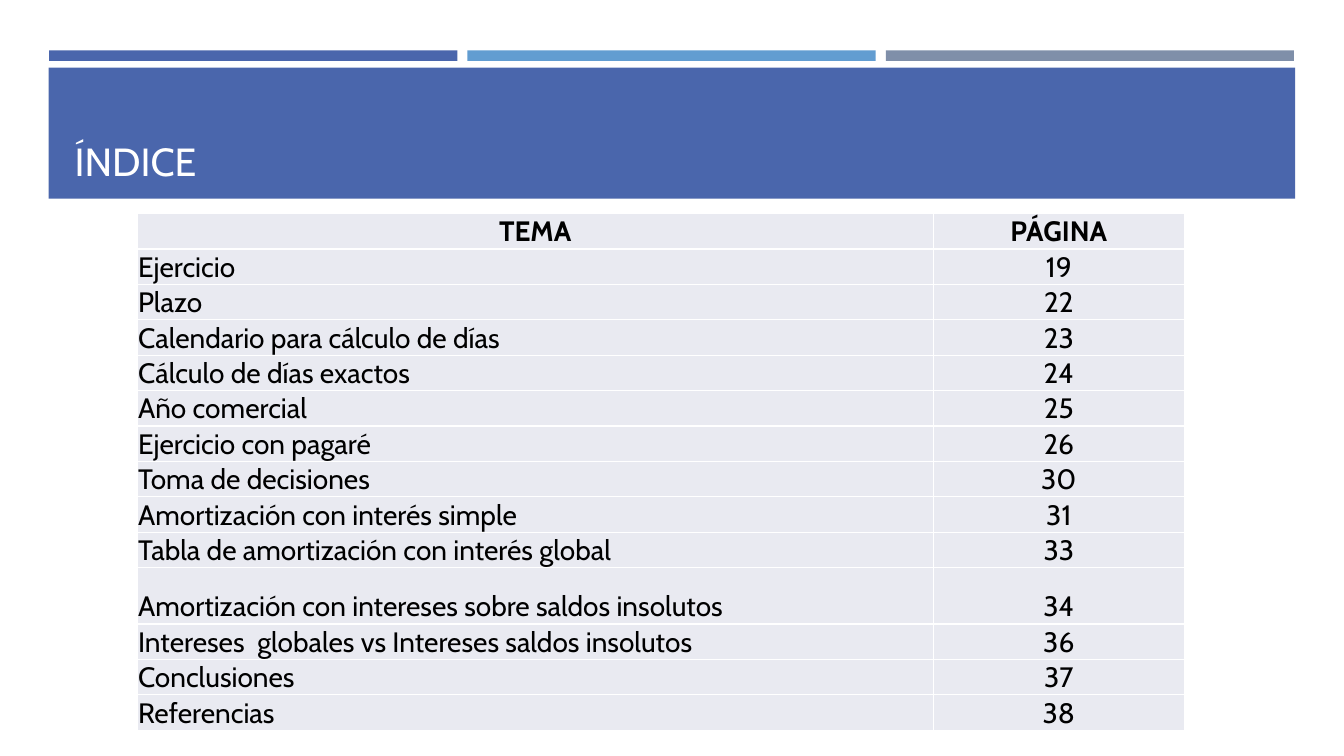
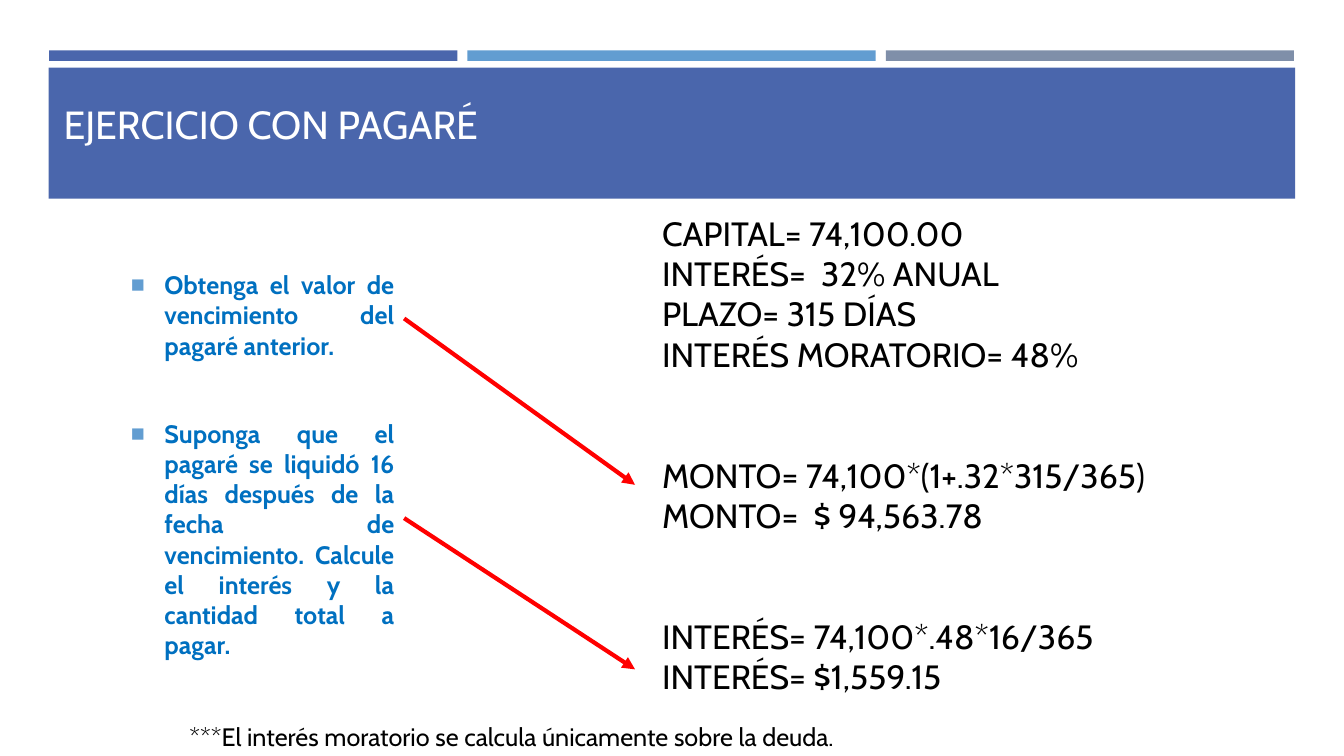
from dataclasses import dataclass

from pptx import Presentation
from pptx import util as u
from pptx.dml import color as col
from pptx.enum import shapes as shp, text as txt
from pptx.oxml import ns, xmlchemy as xc

Pt = u.Pt
rgb = col.RGBColor.from_string
ALIGN = txt.PP_ALIGN
ANCHOR = txt.MSO_ANCHOR


@dataclass(frozen=True)
class Theme:
    font: str = "Cabin"
    primary: str = "4A66AC"
    accent: str = "629DD1"
    muted: str = "7F8FA9"
    row: str = "E9EAF1"
    light: str = "FFFFFF"
    ink: str = "000000"
    question: str = "0070C0"
    arrow: str = "FF0000"
    title_size: int = 28
    formula_size: int = 24
    table_size: int = 20
    body_size: int = 18


THEME = Theme()

INDEX_ROWS = [
    ("TEMA", "PÁGINA"),
    ("Ejercicio", "19"),
    ("Plazo", "22"),
    ("Calendario para cálculo de días", "23"),
    ("Cálculo de días exactos", "24"),
    ("Año comercial", "25"),
    ("Ejercicio con pagaré", "26"),
    ("Toma de decisiones", "30"),
    ("Amortización con interés simple", "31"),
    ("Tabla de amortización con interés global", "33"),
    ("Amortización con intereses sobre saldos insolutos", "34"),
    ("Intereses  globales vs Intereses saldos insolutos", "36"),
    ("Conclusiones", "37"),
    ("Referencias", "38"),
]
TALL_ROW = 10

QUESTIONS = [
    ("Obtenga el valor de vencimiento del pagaré anterior.", 0),
    ("Suponga que el pagaré se liquidó 16 días después de la fecha de "
     "vencimiento. Calcule el interés y la cantidad total a pagar.", 41.3),
]

FORMULAS = [
    ("CAPITAL= 74,100.00", 0),
    ("INTERÉS=  32% ANUAL", 0),
    ("PLAZO= 315 DÍAS", 0),
    ("INTERÉS MORATORIO= 48%", 0),
    ("MONTO= 74,100*(1+.32*315/365)", 57.6),
    ("MONTO=  $ 94,563.78", 0),
    ("INTERÉS= 74,100*.48*16/365", 57.6),
    ("INTERÉS= $1,559.15", 0),
]

FOOTNOTE = [("***El interés moratorio se calcula únicamente sobre la deuda.", 0)]


def apply(target, values):
    for name, value in values.items():
        setattr(target, name, value)


def add_xml(parent, tag, **attributes):
    child = xc.OxmlElement(tag)
    for name, value in attributes.items():
        child.set(name, str(value))
    parent.append(child)
    return child


def place(shape, box):
    apply(shape, dict(zip(("left", "top", "width", "height"), map(Pt, box))))


def write(paragraph, words, size, color, align=ALIGN.LEFT, bold=False, before=0):
    apply(paragraph, {"alignment": align, "space_before": Pt(before),
                      "space_after": Pt(0)})
    run = paragraph.add_run()
    run.text = words
    apply(run.font, {"name": THEME.font, "size": Pt(size), "bold": bold})
    run.font.color.rgb = rgb(color)


def add_band(slide, box, color):
    band = slide.shapes.add_shape(shp.MSO_SHAPE.RECTANGLE, *map(Pt, box))
    band.shadow.inherit = False
    band.fill.solid()
    band.fill.fore_color.rgb = rgb(color)
    band.line.fill.background()
    return band


def add_shared_bands(slide, layout):
    for placeholder in list(layout.placeholders):
        if placeholder.placeholder_format.type != shp.PP_PLACEHOLDER.TITLE:
            layout.shapes.element.remove(placeholder.element)
    colors = (THEME.primary, THEME.accent, THEME.muted)
    bands = [add_band(slide, (35.1 + 298.8 * i, 36, 291.6, 7.5), color)
             for i, color in enumerate(colors)]
    bands.append(add_band(slide, (34.8, 48.4, 890.4, 93.6), THEME.primary))
    for band in bands:
        layout.shapes.element.append(band.element)


def set_title(slide, words, box):
    title = slide.shapes.title
    place(title, box)
    apply(title.text_frame, {"vertical_anchor": ANCHOR.BOTTOM, "word_wrap": True,
                             "auto_size": txt.MSO_AUTO_SIZE.NONE})
    write(title.text_frame.paragraphs[0], words, THEME.title_size, THEME.light)


def add_text(slide, box, lines, size, color, anchor=ANCHOR.TOP, **style):
    frame = slide.shapes.add_textbox(*map(Pt, box)).text_frame
    apply(frame, {"word_wrap": True, "vertical_anchor": anchor})
    for i, (words, before) in enumerate(lines):
        paragraph = frame.add_paragraph() if i else frame.paragraphs[0]
        write(paragraph, words, size, color, before=before, **style)
    return frame


def add_bullet(paragraph):
    properties = paragraph._p.get_or_add_pPr()
    indent = Pt(24)
    properties.set("marL", str(indent))
    properties.set("indent", str(-indent))
    add_xml(add_xml(properties, "a:buClr"), "a:srgbClr", val=THEME.accent)
    add_xml(properties, "a:buSzPct", val=92000)
    add_xml(properties, "a:buFont", typeface="Arial")
    add_xml(properties, "a:buChar", char="■")


def add_arrow(slide, start, end):
    arrow = slide.shapes.add_connector(shp.MSO_CONNECTOR.STRAIGHT,
                                       *map(Pt, start + end))
    arrow.line.width = Pt(3)
    arrow.line.color.rgb = rgb(THEME.arrow)
    add_xml(arrow.line._get_or_add_ln(), "a:tailEnd", type="triangle")
    add_xml(arrow.element.find(ns.qn("p:spPr")), "a:effectLst")


def format_cell(cell):
    properties = cell._tc.get_or_add_tcPr()
    for side in "LRTB":
        border = add_xml(properties, f"a:ln{side}", w=Pt(1))
        add_xml(add_xml(border, "a:solidFill"), "a:srgbClr", val=THEME.light)
    cell.fill.solid()
    cell.fill.fore_color.rgb = rgb(THEME.row)
    apply(cell, {"margin_left": Pt(0.72), "margin_right": Pt(0.72),
                 "margin_top": Pt(0.72), "margin_bottom": 0,
                 "vertical_anchor": ANCHOR.BOTTOM})


def add_index_table(slide):
    widths = (568.8, 179.3)
    heights = [40.3 if i == TALL_ROW else 25.3 for i in range(len(INDEX_ROWS))]
    box = (97.9, 152.6, sum(widths), sum(heights))
    table = slide.shapes.add_table(len(heights), len(widths), *map(Pt, box)).table
    apply(table, {"first_row": False, "horz_banding": False})
    for column, width in zip(table.columns, widths):
        column.width = Pt(width)
    for r, entry in enumerate(INDEX_ROWS):
        table.rows[r].height = Pt(heights[r])
        for c, words in enumerate(entry):
            cell = table.cell(r, c)
            format_cell(cell)
            header = r == 0
            align = ALIGN.CENTER if header or c else ALIGN.LEFT
            write(cell.text_frame.paragraphs[0], words, THEME.table_size,
                  THEME.ink, align, header)


def build_index(slide):
    set_title(slide, "ÍNDICE", (46.1, 55.4, 868.3, 79.9))
    add_index_table(slide)


def build_exercise(slide):
    set_title(slide, "EJERCICIO CON PAGARÉ", (38.2, 66.2, 792, 42.5))
    questions = add_text(slide, (86.4, 173.5, 202.3, 316.8), QUESTIONS,
                         THEME.body_size, THEME.question, ANCHOR.MIDDLE,
                         align=ALIGN.JUSTIFY, bold=True)
    for paragraph in questions.paragraphs:
        add_bullet(paragraph)
    add_text(slide, (465.8, 148.3, 480, 360), FORMULAS,
             THEME.formula_size, THEME.ink)
    for start_y, end_y in ((227.5, 346.3), (370.1, 478.1)):
        add_arrow(slide, (288.7, start_y), (453.6, end_y))
    add_text(slide, (128.2, 511.9, 714.2, 28), FOOTNOTE,
             THEME.body_size, THEME.ink)


def main():
    deck = Presentation()
    apply(deck, {"slide_width": Pt(960), "slide_height": Pt(540)})
    layout = deck.slide_layouts[5]
    index, exercise = (deck.slides.add_slide(layout) for _ in range(2))
    add_shared_bands(index, layout)
    build_index(index)
    build_exercise(exercise)
    deck.save("out.pptx")


if __name__ == "__main__":
    main()
